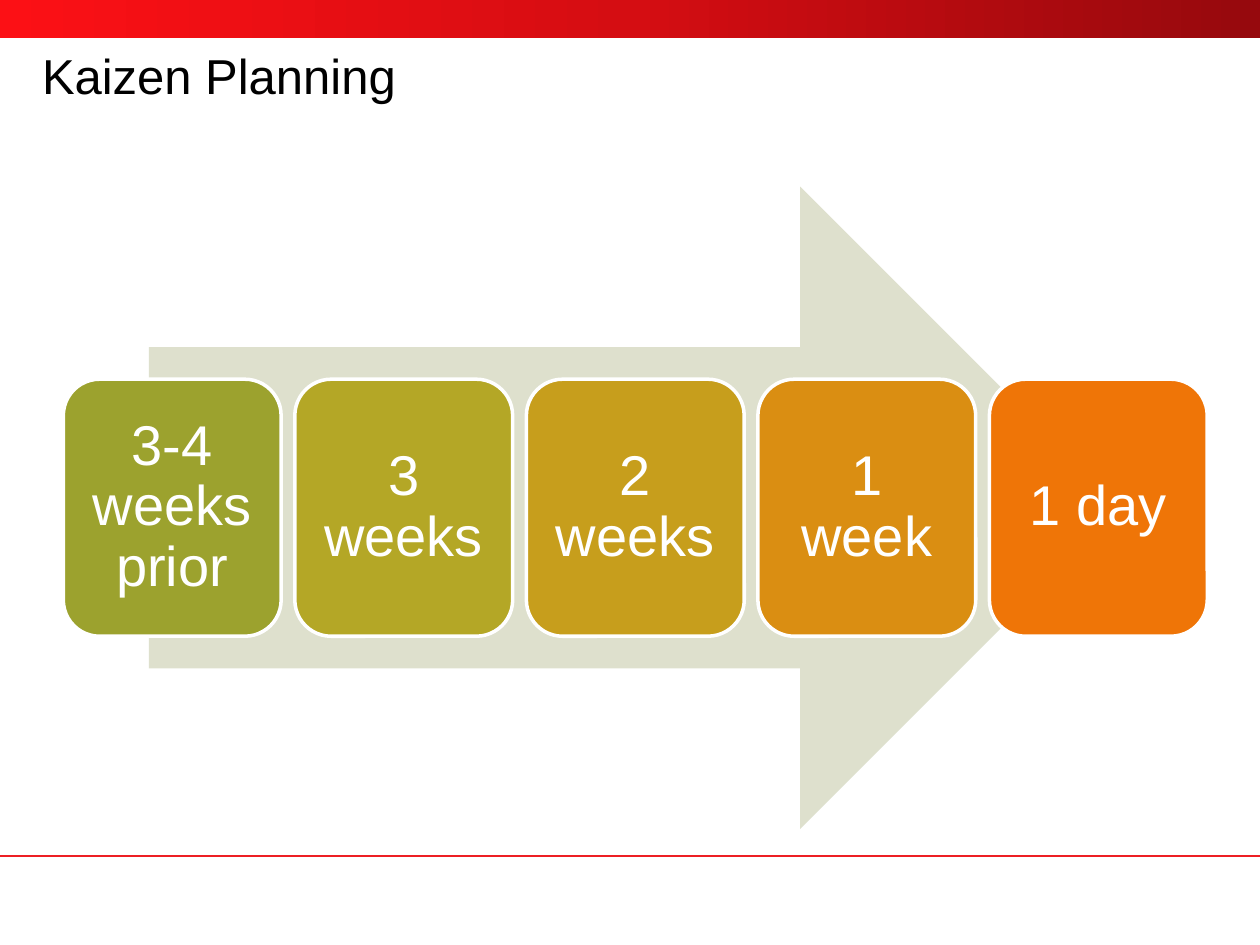
"""Build the Kaizen Planning timeline slide."""
import copy

import pptx
import pptx.dml.color
import pptx.enum.shapes
import pptx.enum.text
import pptx.oxml.ns
import pptx.oxml.xmlchemy
import pptx.util

Pt = pptx.util.Pt
SHAPES = pptx.enum.shapes.MSO_SHAPE
ALIGN = pptx.enum.text.PP_ALIGN
ANCHOR = pptx.enum.text.MSO_ANCHOR

SLIDE_WIDTH, SLIDE_HEIGHT = 720, 540
BANNER_STOPS = [(0, "96090D"), (50, "D50D12"), (100, "FC1015")]
MILESTONES = [
    ("3-4 weeks prior", "9CA22E"),
    ("3 weeks", "B4A726"),
    ("2 weeks", "C79E1C"),
    ("1 week", "DA8E12"),
    ("1 day", "EF7507"),
]
MILESTONE_LEFT, MILESTONE_PITCH = 36.2, 132.3


def color(hex_value):
    """Return the RGB colour of a hex string."""
    return pptx.dml.color.RGBColor.from_string(hex_value)


def apply_format(target, values):
    """Set each named attribute of the target."""
    for name, value in values.items():
        setattr(target, name, value)


def write_text(frame, text, size, hex_value, align, anchor, margin):
    """Write one formatted paragraph into a text frame."""
    sides = ("margin_left", "margin_top", "margin_right", "margin_bottom")
    apply_format(frame, {"word_wrap": True, "vertical_anchor": anchor})
    apply_format(frame, dict.fromkeys(sides, Pt(margin)))
    paragraph = frame.paragraphs[0]
    paragraph.text = text
    apply_format(paragraph, {"alignment": align, "line_spacing": 0.9})
    apply_format(paragraph.font, {"name": "Arial", "size": Pt(size)})
    paragraph.font.color.rgb = color(hex_value)


def add_block(slide, kind, box, fill=None, outline=None):
    """Add a preset shape with a flat fill and an optional outline."""
    block = slide.shapes.add_shape(kind, *map(Pt, box))
    block.shadow.inherit = False
    if fill:
        block.fill.solid()
        block.fill.fore_color.rgb = color(fill)
    if outline:
        block.line.color.rgb = color(outline)
        block.line.width = Pt(2)
    else:
        block.line.fill.background()
    return block


def add_banner(slide):
    """Add the gradient band along the top edge."""
    banner = add_block(slide, SHAPES.RECTANGLE, (0, 0, SLIDE_WIDTH, 22))
    banner.fill.gradient()
    banner.fill.gradient_angle = 180
    stop_list = banner._element.spPr.find(".//" + pptx.oxml.ns.qn("a:gsLst"))
    stop_list.append(copy.deepcopy(stop_list[0]))
    for stop, (percent, hex_value) in zip(banner.fill.gradient_stops, BANNER_STOPS):
        stop.position = percent / 100
        stop.color.rgb = color(hex_value)


def add_rule(slide, top):
    """Add the thin red line across the slide."""
    rule = slide.shapes.add_connector(
        pptx.enum.shapes.MSO_CONNECTOR.STRAIGHT,
        Pt(0), Pt(top), Pt(SLIDE_WIDTH), Pt(top),
    )
    rule.line.color.rgb = color("ED1F24")
    rule.line.width = Pt(1)
    rule._element.spPr.append(pptx.oxml.xmlchemy.OxmlElement("a:effectLst"))


def add_title(slide, text):
    """Add the slide title."""
    title = slide.shapes.add_textbox(Pt(24), Pt(30), Pt(672), Pt(68.4))
    write_text(title.text_frame, text, 28, "000000", ALIGN.LEFT, ANCHOR.TOP, 0)


def add_milestone(slide, index, label, fill):
    """Add one rounded milestone card at its place in the row."""
    left = MILESTONE_LEFT + index * MILESTONE_PITCH
    card = add_block(
        slide, SHAPES.ROUNDED_RECTANGLE, (left, 216.7, 124.5, 146.9), fill, "FFFFFF"
    )
    write_text(card.text_frame, label, 32, "FFFFFF", ALIGN.CENTER, ANCHOR.MIDDLE, 9.6)


def main():
    """Build and save the slide."""
    deck = pptx.Presentation()
    apply_format(
        deck, {"slide_width": Pt(SLIDE_WIDTH), "slide_height": Pt(SLIDE_HEIGHT)}
    )
    slide = deck.slides.add_slide(deck.slide_layouts[6])
    add_banner(slide)
    add_rule(slide, 489)
    add_title(slide, "Kaizen Planning")
    add_block(slide, SHAPES.RIGHT_ARROW, (85, 106.6, 555.8, 367.2), "DEE0CD")
    for index, (label, fill) in enumerate(MILESTONES):
        add_milestone(slide, index, label, fill)
    deck.save("out.pptx")


if __name__ == "__main__":
    main()
